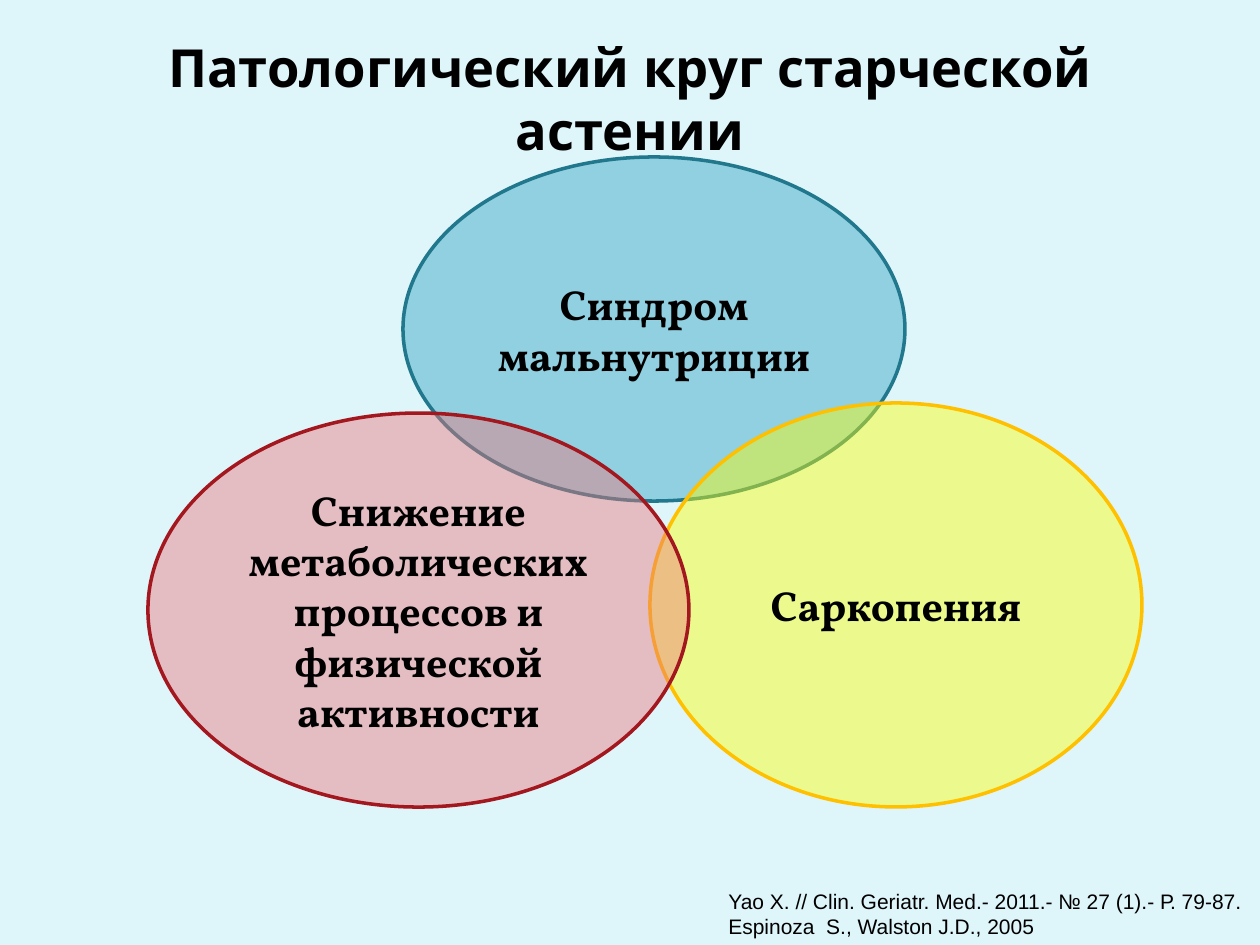
from lxml.etree import SubElement
from pptx import Presentation
from pptx.dml.color import RGBColor
from pptx.enum.shapes import MSO_SHAPE
from pptx.enum.text import MSO_ANCHOR, PP_ALIGN
from pptx.oxml.ns import qn
from pptx.util import Emu, Pt

BACKGROUND = RGBColor(0xDE, 0xF5, 0xFA)
BLACK = RGBColor(0, 0, 0)
BLUE = RGBColor(0x2D, 0xA2, 0xBF)
DARK_BLUE = RGBColor(0x21, 0x78, 0x8D)
YELLOW = RGBColor(0xFF, 0xFF, 0x00)
AMBER = RGBColor(0xFF, 0xC0, 0x00)
PINK = RGBColor(0xEC, 0x76, 0x7C)
DARK_RED = RGBColor(0xA3, 0x17, 0x1E)


def px(*lengths):
    return [Emu(round(length * 914400 / 126)) for length in lengths]


def write(frame, text, font_name, size, bold, align):
    frame.text = text
    for paragraph in frame.paragraphs:
        paragraph.alignment = align
        for run in paragraph.runs:
            run.font.name = font_name
            run.font.size = Pt(size)
            run.font.bold = bold
            run.font.color.rgb = BLACK


prs = Presentation()
prs.slide_width, prs.slide_height = px(1260, 945)
slide = prs.slides.add_slide(prs.slide_layouts[6])
slide.background.fill.solid()
slide.background.fill.fore_color.rgb = BACKGROUND

title = slide.shapes.add_textbox(*px(63, 38, 1134, 120)).text_frame
title.word_wrap = True
title.vertical_anchor = MSO_ANCHOR.MIDDLE
write(title, "Патологический круг старческой астении", "Noto Sans", 30, True, PP_ALIGN.CENTER)

sources = slide.shapes.add_textbox(*px(716, 882, 544, 63)).text_frame
sources.word_wrap = False
write(
    sources,
    "Yao X. // Clin. Geriatr. Med.- 2011.- № 27 (1).- Р. 79-87.\nEspinoza  S., Walston J.D., 2005",
    "Arial", 12, False, PP_ALIGN.LEFT,
)

factors = [
    ("Синдром мальнутриции", (403, 157, 502, 344), BLUE, DARK_BLUE),
    ("Саркопения", (650, 403, 492, 404), YELLOW, AMBER),
    ("Снижение метаболических процессов и физической активности",
     (148, 413, 541, 394), PINK, DARK_RED),
]
for label, box, fill_color, line_color in factors:
    factor = slide.shapes.add_shape(MSO_SHAPE.OVAL, *px(*box))
    factor.shadow.inherit = False
    factor.fill.solid()
    factor.fill.fore_color.rgb = fill_color
    color = factor.fill._xPr.find(qn("a:solidFill")).find(qn("a:srgbClr"))
    SubElement(color, qn("a:alpha")).set("val", "44000")
    factor.line.color.rgb = line_color
    factor.line.width = Pt(2)
    factor.text_frame.word_wrap = True
    factor.text_frame.vertical_anchor = MSO_ANCHOR.MIDDLE
    write(factor.text_frame, label, "Vollkorn", 24, True, PP_ALIGN.CENTER)

prs.save("out.pptx")
